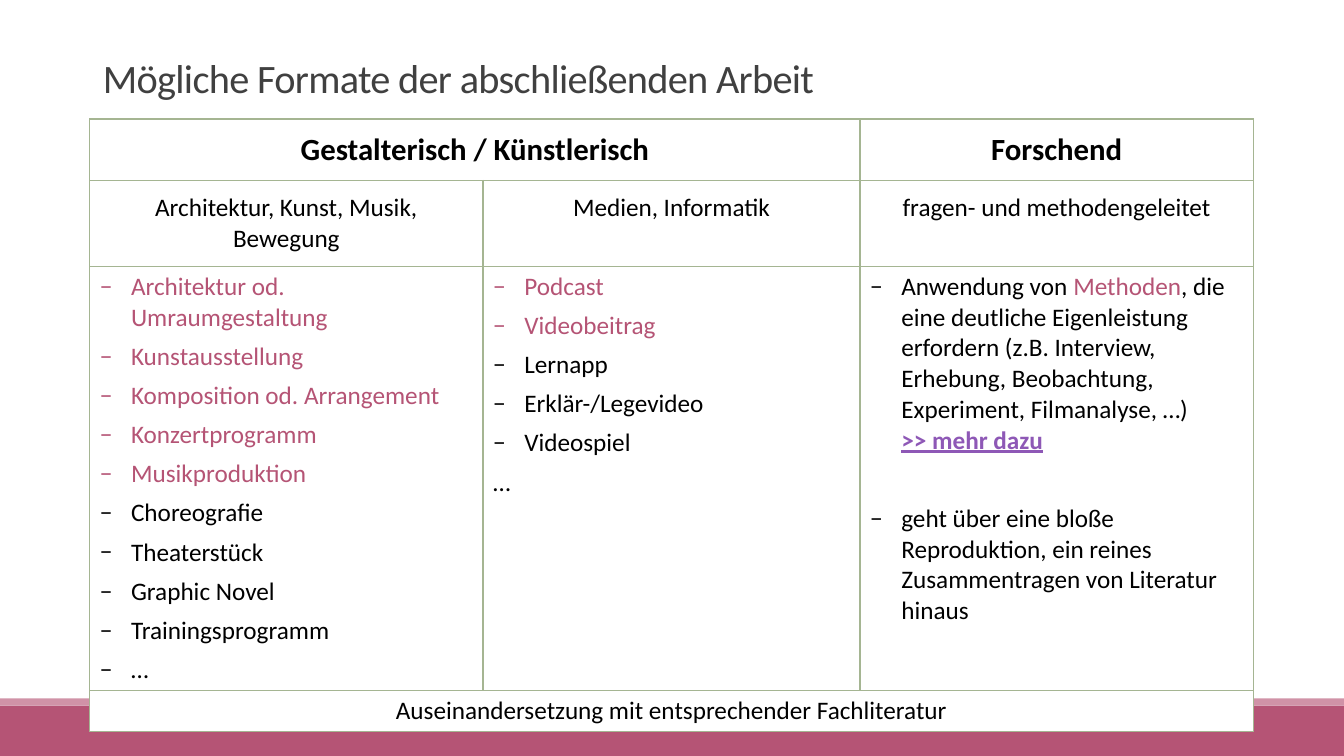
from lxml.etree import SubElement
from pptx import Presentation
from pptx.dml.color import RGBColor
from pptx.enum.shapes import MSO_SHAPE
from pptx.enum.text import MSO_ANCHOR, MSO_AUTO_SIZE, PP_ALIGN
from pptx.oxml.ns import qn
from pptx.util import Inches, Pt

BLACK, BERRY, PURPLE, GREEN = "000000", "B55475", "8E58B6", "A5B592"


def paint(color_format, color):
    color_format.rgb = RGBColor.from_string(color)


def add_run(paragraph, text, color=BLACK, size=18, bold=False, underline=False):
    run = paragraph.add_run()
    run.text = text
    run.font.name = "Calibri"
    run.font.size = Pt(size)
    run.font.bold = bold
    run.font.underline = underline
    paint(run.font.color, color)
    return run


presentation = Presentation()
presentation.slide_width = Inches(13.33)
presentation.slide_height = Inches(7.5)
slide = presentation.slides.add_slide(presentation.slide_layouts[5])

for top, height, color in [(7, 0.5, BERRY), (6.93, 0.07, "D092A7")]:
    band = slide.shapes.add_shape(
        MSO_SHAPE.RECTANGLE, 0, Inches(top), Inches(13.33), Inches(height))
    band.shadow.inherit = False
    band.fill.solid()
    paint(band.fill.fore_color, color)
    band.line.fill.background()

title = slide.shapes.title
title.left, title.top = Inches(0.92), Inches(0.55)
title.width, title.height = Inches(11.5), Inches(0.51)
title.text_frame.auto_size = MSO_AUTO_SIZE.NONE
title.text_frame.vertical_anchor = MSO_ANCHOR.BOTTOM
paragraph = title.text_frame.paragraphs[0]
paragraph.alignment = PP_ALIGN.LEFT
paragraph.line_spacing = 0.85
run = add_run(paragraph, "Mögliche Formate der abschließenden Arbeit", "404040", 28.8)
run.font._element.set("spc", "-50")

column_widths = [3.9, 3.74, 3.9]
row_heights = [0.61, 0.84, 4.2, 0.41]
table = slide.shapes.add_table(
    4, 3, Inches(0.89), Inches(1.18),
    Inches(sum(column_widths)), Inches(sum(row_heights))).table
table.first_row = False
table.horz_banding = False
for column, width in zip(table.columns, column_widths):
    column.width = Inches(width)
for row, height in zip(table.rows, row_heights):
    row.height = Inches(height)

for cell in table.iter_cells():
    properties = cell._tc.get_or_add_tcPr()
    for side in ("a:lnL", "a:lnR", "a:lnT", "a:lnB"):
        border = SubElement(properties, qn(side), w=str(Pt(1)))
        border_fill = SubElement(border, qn("a:solidFill"))
        SubElement(border_fill, qn("a:srgbClr"), val=GREEN)
    cell.fill.solid()
    paint(cell.fill.fore_color, "FFFFFF")

table.cell(0, 0).merge(table.cell(0, 1))
table.cell(3, 0).merge(table.cell(3, 2))

centred_cells = [
    (0, 0, "Gestalterisch / Künstlerisch"),
    (0, 2, "Forschend"),
    (1, 0, "Architektur, Kunst, Musik, Bewegung"),
    (1, 1, "Medien, Informatik"),
    (1, 2, "fragen- und methodengeleitet"),
    (3, 0, "Auseinandersetzung mit entsprechender Fachliteratur"),
]
for row, column, text in centred_cells:
    cell = table.cell(row, column)
    if row < 2:
        cell.margin_top = cell.margin_bottom = Inches(0.12)
    paragraph = cell.text_frame.paragraphs[0]
    paragraph.alignment = PP_ALIGN.CENTER
    add_run(paragraph, text, size=22 if row == 0 else 18, bold=row == 0)

linked_formats = [
    ["Architektur od. Umraumgestaltung", "Kunstausstellung",
     "Komposition od. Arrangement", "Konzertprogramm", "Musikproduktion"],
    ["Podcast", "Videobeitrag"],
]
other_formats = [
    ["Choreografie", "Theaterstück", "Graphic Novel", "Trainingsprogramm", "…"],
    ["Lernapp", "Erklär-/Legevideo", "Videospiel", "…"],
]
lists = [
    [([(text, BERRY)], 6) for text in linked] + [([(text, BLACK)], 6) for text in others]
    for linked, others in zip(linked_formats, other_formats)
]
lists.append([
    ([("Anwendung von ", BLACK), ("Methoden", BERRY),
      (", die eine deutliche Eigenleistung erfordern (z.B. Interview, Erhebung, "
       "Beobachtung, Experiment, Filmanalyse, …)", BLACK)], 34),
    ([("geht über eine bloße Reproduktion, ein reines Zusammentragen "
       "von Literatur hinaus", BLACK)], 12),
])

for column, entries in enumerate(lists):
    frame = table.cell(2, column).text_frame
    for index, (runs, space_after) in enumerate(entries):
        paragraph = frame.add_paragraph() if index else frame.paragraphs[0]
        paragraph.space_after = Pt(space_after)
        for text, color in runs:
            add_run(paragraph, text, color)
        if column == 1 and index == len(entries) - 1:
            continue
        properties = paragraph._p.get_or_add_pPr()
        properties.set("marL", str(Inches(0.31)))
        properties.set("indent", str(-Inches(0.31)))
        SubElement(properties, qn("a:buFont"), typeface="Calibri")
        SubElement(properties, qn("a:buChar"), char="−")

methods = table.cell(2, 2).text_frame.paragraphs[0]
methods.add_line_break()
add_run(methods, ">> mehr dazu", PURPLE, bold=True, underline=True)

presentation.save("out.pptx")
